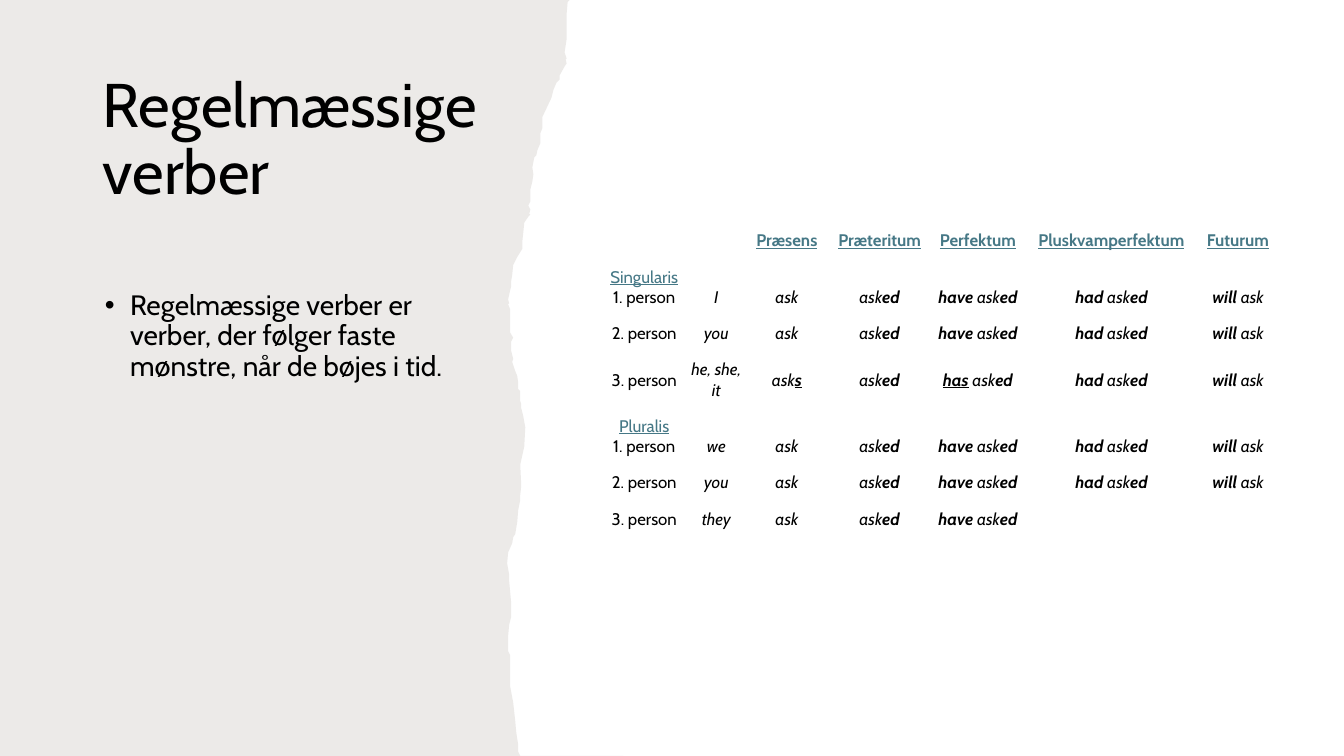
from dataclasses import dataclass

from lxml import etree
from pptx import Presentation, util as u
from pptx.dml.color import RGBColor
from pptx.enum import text
from pptx.oxml.ns import qn


@dataclass(frozen=True)
class Theme:
    font: str = "Cabin"
    ink: str = "000000"
    link: str = "467886"
    paper: str = "82766A"
    paper_opacity: int = 15
    title_size: int = 44
    body_size: int = 20
    table_size: int = 12


TORN_EDGE = [
    (565, 0), (563, 2), (562, 14), (562, 20), (562, 39), (560, 52), (562, 58),
    (561, 59), (562, 63), (560, 66), (555, 75), (555, 79), (552, 82), (549, 89),
    (547, 97), (538, 116), (538, 127), (536, 132), (536, 142), (533, 149),
    (532, 154), (530, 156), (528, 166), (529, 173), (528, 180), (526, 188),
    (526, 200), (524, 204), (526, 208), (525, 212), (526, 213), (524, 215),
    (520, 221), (519, 231), (518, 240), (518, 247), (513, 255), (509, 263),
    (508, 273), (507, 279), (507, 284), (506, 288), (504, 297), (505, 301),
    (504, 302), (506, 307), (506, 318), (506, 326), (506, 330), (509, 335),
    (507, 339), (507, 348), (509, 356), (508, 359), (511, 368), (513, 373),
    (514, 380), (514, 386), (516, 388), (516, 398), (517, 401), (517, 405),
    (519, 413), (521, 424), (520, 443), (516, 461), (517, 482), (516, 491),
    (516, 496), (514, 506), (513, 518), (511, 530), (509, 533), (508, 539),
    (504, 548), (503, 559), (505, 570), (505, 576), (507, 598), (507, 612),
    (505, 620), (504, 631), (504, 646), (506, 650), (506, 666), (506, 681),
    (509, 697), (511, 715), (512, 726), (513, 733), (514, 739), (514, 746),
    (516, 750), (618, 750),
]

TENSES = ["Præsens", "Præteritum", "Perfektum", "Pluskvamperfektum", "Futurum"]
FORMS = ["ask", "ask*ed", "*have* ask*ed", "*had* ask*ed", "*will* ask"]
THIRD_SINGULAR = ["ask*_s", "ask*ed", "*_has* ask*ed"] + FORMS[3:]
VERB_ROWS = [
    ("Singularis", "1. person", "I", FORMS),
    ("", "2. person", "you", FORMS),
    ("", "3. person", "he, she, it", THIRD_SINGULAR),
    ("Pluralis", "1. person", "we", FORMS),
    ("", "2. person", "you", FORMS),
    ("", "3. person", "they", FORMS[:3]),
]
COLUMN_WIDTHS = [0.86, 0.57, 0.83, 1.01, 0.94, 1.71, 0.8]
ROW_HEIGHTS = [0.36, 0.56, 0.36, 0.56, 0.56, 0.36, 0.36]


def add_span(para, words, *, font, size, color, bold=False, italic=False, underline=False):
    span = para.add_run()
    span.text = words
    span.font.name = font
    span.font.size = u.Pt(size)
    span.font.color.rgb = RGBColor.from_string(color)
    span.font.bold = bold
    span.font.italic = italic
    span.font.underline = underline


class VerbSlide:
    def __init__(self, deck, theme):
        self.theme = theme
        self.page = deck.slides.add_slide(deck.slide_layouts[1])

    def words(self, para, words, size, color=None, **style):
        add_span(para, words, font=self.theme.font, size=size,
                 color=color or self.theme.ink, **style)

    def torn_paper(self, edge):
        builder = self.page.shapes.build_freeform(0, 0, scale=u.Inches(1) / 100)
        builder.add_line_segments(edge + [(0, 750)], close=True)
        paper = builder.convert_to_shape()
        paper.shadow.inherit = False
        paper.line.fill.background()
        paper.fill.solid()
        paper.fill.fore_color.rgb = RGBColor.from_string(self.theme.paper)
        color = paper.element.spPr.find(qn("a:solidFill"))[0]
        etree.SubElement(color, qn("a:alpha"), val=str(self.theme.paper_opacity * 1000))
        paper.element.getparent().insert(2, paper.element)

    def placeholder(self, box, left, top, width, height, anchor):
        box.left, box.top = u.Inches(left), u.Inches(top)
        box.width, box.height = u.Inches(width), u.Inches(height)
        frame = box.text_frame
        frame.word_wrap = True
        frame.auto_size = text.MSO_AUTO_SIZE.NONE
        frame.vertical_anchor = anchor
        para = frame.paragraphs[0]
        para.alignment = text.PP_ALIGN.LEFT
        para.line_spacing = 0.9
        para.space_before = u.Pt(0)
        return frame, para

    def title(self, words):
        _, para = self.placeholder(self.page.shapes.title, 0.92, 0.67, 4.09, 1.46,
                                   text.MSO_ANCHOR.MIDDLE)
        self.words(para, words, self.theme.title_size)

    def bullet(self, words):
        frame, para = self.placeholder(self.page.placeholders[1], 0.94, 2.4, 3.75, 4.27,
                                       text.MSO_ANCHOR.TOP)
        frame.margin_top = u.Inches(0.49)
        layout = para._p.get_or_add_pPr()
        layout.set("marL", str(u.Inches(0.25)))
        layout.set("indent", str(-u.Inches(0.25)))
        etree.SubElement(layout, qn("a:buFont"), typeface="Arial")
        etree.SubElement(layout, qn("a:buChar"), char="•")
        self.words(para, words, self.theme.body_size)

    def table(self, left, top, widths, heights):
        frame = self.page.shapes.add_table(
            len(heights), len(widths), u.Inches(left), u.Inches(top),
            u.Inches(sum(widths)), u.Inches(sum(heights)))
        table = frame.table
        table.first_row = table.horz_banding = False
        for column, width in zip(table.columns, widths):
            column.width = u.Inches(width)
        for row, height in zip(table.rows, heights):
            row.height = u.Inches(height)
        for cell in table.iter_cells():
            cell.fill.background()
            cell.margin_left = cell.margin_right = 0
            cell.margin_top = cell.margin_bottom = 0
        return table

    def cell_para(self, cell, low=False):
        cell.margin_top = u.Inches(0.06)
        cell.margin_bottom = u.Inches(0.08 if low else 0.06)
        cell.vertical_anchor = text.MSO_ANCHOR.BOTTOM if low else text.MSO_ANCHOR.MIDDLE
        para = cell.text_frame.paragraphs[0]
        para.alignment = text.PP_ALIGN.CENTER
        return para

    def verb_table(self, tenses, rows):
        size, link = self.theme.table_size, self.theme.link
        table = self.table(5.96, 2.21, COLUMN_WIDTHS, ROW_HEIGHTS)
        for column, tense in enumerate(tenses, 2):
            para = self.cell_para(table.cell(0, column))
            self.words(para, tense, size, link, bold=True, underline=True)
        for row, (number, person, pronoun, forms) in enumerate(rows, 1):
            para = self.cell_para(table.cell(row, 0))
            if number:
                self.words(para, number, size, link, underline=True)
                para.add_line_break()
            self.words(para, person, size)
            for column, form in enumerate([pronoun] + forms, 1):
                para = self.cell_para(table.cell(row, column), low=bool(number))
                for index, part in enumerate(form.split("*")):
                    if part:
                        self.words(para, part.lstrip("_"), size, italic=True,
                                   bold=index % 2 == 1, underline=part.startswith("_"))


def main():
    deck = Presentation()
    deck.slide_width, deck.slide_height = u.Inches(13.33), u.Inches(7.5)
    slide = VerbSlide(deck, Theme())
    slide.torn_paper(TORN_EDGE)
    slide.title("Regelmæssige verber")
    slide.bullet("Regelmæssige verber er verber, der følger faste mønstre, når de bøjes i tid.")
    slide.verb_table(TENSES, VERB_ROWS)
    deck.save("out.pptx")


if __name__ == "__main__":
    main()
